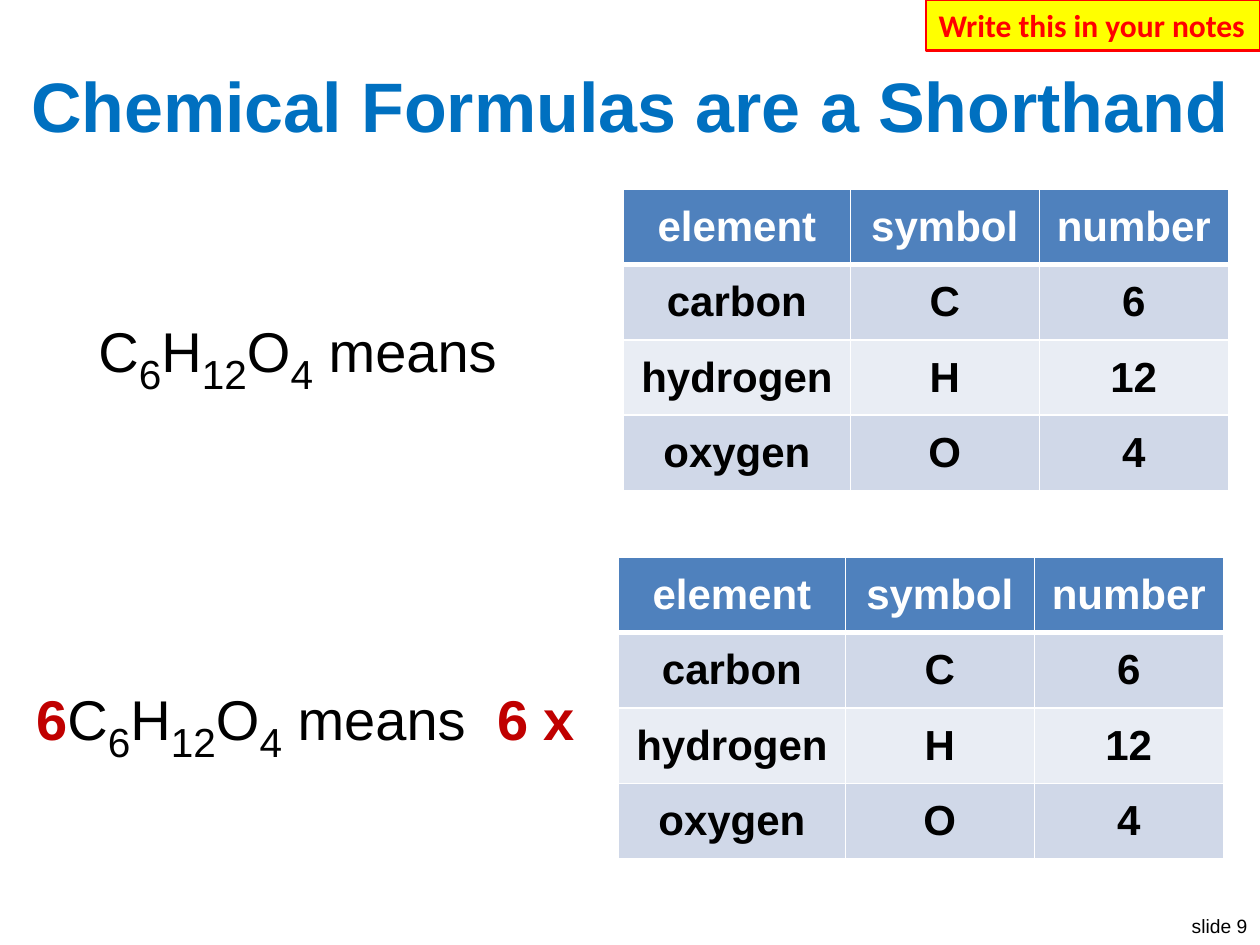
from dataclasses import dataclass
from itertools import groupby

from lxml import etree
from pptx import Presentation
from pptx.dml.color import RGBColor
from pptx.enum.shapes import MSO_SHAPE
from pptx.enum.text import MSO_ANCHOR, MSO_AUTO_SIZE, PP_ALIGN
from pptx.oxml.ns import qn
from pptx.util import Cm, Pt

RECT = MSO_SHAPE.RECTANGLE
TOP, MIDDLE = MSO_ANCHOR.TOP, MSO_ANCHOR.MIDDLE
LEFT, CENTER, RIGHT = PP_ALIGN.LEFT, PP_ALIGN.CENTER, PP_ALIGN.RIGHT
NO_FIT = MSO_AUTO_SIZE.NONE


@dataclass(frozen=True)
class Theme:
    font: str = "Arial"
    note_font: str = "Calibri"
    black: str = "000000"
    white: str = "FFFFFF"
    title: str = "0070C0"
    accent: str = "C00000"
    header: str = "4F81BD"
    bands: tuple = ("D0D8E8", "E9EDF4")
    note_fill: str = "FFFF00"
    note_ink: str = "FF0000"
    title_size: int = 40
    formula_size: int = 32
    subscript_size: int = 40
    table_size: int = 24
    note_size: int = 18
    footer_size: int = 11


THEME = Theme()
FORMULA = "C6H12O4"
ELEMENTS = [
    ("element", "symbol", "number"),
    ("carbon", "C", "6"),
    ("hydrogen", "H", "12"),
    ("oxygen", "O", "4"),
]
COLUMN_WIDTHS = (4.57, 3.81, 3.81)
ROW_HEIGHT = 1.52


def rgb(value):
    return RGBColor.from_string(value)


def set_attrs(target, values):
    for name, value in values.items():
        setattr(target, name, value)


def place(sp, left, top, width, height):
    set_attrs(sp, {"left": Cm(left), "top": Cm(top),
                   "width": Cm(width), "height": Cm(height)})


def add_run(p, text, size, color=THEME.black, bold=False, font=THEME.font):
    r = p.add_run()
    r.text = text
    set_attrs(r.font, {"name": font, "size": Pt(size), "bold": bold})
    r.font.color.rgb = rgb(color)
    return r


def set_frame(tf, align, wrap=True, anchor=TOP):
    set_attrs(tf, {"word_wrap": wrap, "auto_size": NO_FIT,
                   "vertical_anchor": anchor})
    p = tf.paragraphs[0]
    p.alignment = align
    return p


def add_title(s, text):
    sp = s.shapes.title
    place(sp, 0.25, 1.09, 24.89, 2.03)
    p = set_frame(sp.text_frame, CENTER, anchor=MIDDLE)
    add_run(p, text, THEME.title_size, THEME.title, True)


def write_formula(tf, ending, multiplier=""):
    p = set_frame(tf, LEFT)
    p.space_before = Pt(12)
    pPr = p._p.get_or_add_pPr()
    pPr.set("marL", "0")
    pPr.set("indent", "0")
    etree.SubElement(pPr, qn("a:buNone"))
    if multiplier:
        add_run(p, multiplier, THEME.formula_size, THEME.accent, True)
    for is_count, chars in groupby(FORMULA, str.isdigit):
        size = THEME.subscript_size if is_count else THEME.formula_size
        r = add_run(p, "".join(chars), size)
        if is_count:
            r._r.get_or_add_rPr().set("baseline", "-25000")
    add_run(p, ending, THEME.formula_size)
    if multiplier:
        add_run(p, multiplier + " x", THEME.formula_size, THEME.accent, True)


def add_border(cell, side, width):
    ln = etree.SubElement(cell._tc.get_or_add_tcPr(), qn("a:ln" + side),
                          w=str(Pt(width)))
    fill = etree.SubElement(ln, qn("a:solidFill"))
    etree.SubElement(fill, qn("a:srgbClr"), val=THEME.white)


def format_cell(cell, text, row):
    is_header = row == 0
    widths = {"L": 1, "R": 1, "T": 3 if row == 1 else 1,
              "B": 3 if is_header else 1}
    for side, width in widths.items():
        add_border(cell, side, width)
    cell.fill.solid()
    cell.fill.fore_color.rgb = rgb(
        THEME.header if is_header else THEME.bands[(row - 1) % 2])
    cell.vertical_anchor = MIDDLE
    p = cell.text_frame.paragraphs[0]
    p.alignment = CENTER
    add_run(p, text, THEME.table_size,
            THEME.white if is_header else THEME.black, True)


def add_element_table(s, left, top):
    table = s.shapes.add_table(
        len(ELEMENTS), len(COLUMN_WIDTHS), Cm(left), Cm(top),
        Cm(sum(COLUMN_WIDTHS)), Cm(ROW_HEIGHT * len(ELEMENTS))).table
    for column, width in zip(table.columns, COLUMN_WIDTHS):
        column.width = Cm(width)
    for i, values in enumerate(ELEMENTS):
        table.rows[i].height = Cm(ROW_HEIGHT)
        for j, text in enumerate(values):
            format_cell(table.cell(i, j), text, i)


def add_text_box(s, left, top, width, height):
    return s.shapes.add_textbox(
        Cm(left), Cm(top), Cm(width), Cm(height)).text_frame


def add_note_badge(s, text):
    sp = s.shapes.add_shape(RECT, Cm(18.67), Cm(0), Cm(6.73), Cm(1.02))
    sp.shadow.inherit = False
    sp.fill.solid()
    sp.fill.fore_color.rgb = rgb(THEME.note_fill)
    sp.line.color.rgb = rgb(THEME.note_ink)
    sp.line.width = Pt(1.5)
    p = set_frame(sp.text_frame, LEFT, wrap=False)
    add_run(p, text, THEME.note_size, THEME.note_ink, True, THEME.note_font)


def add_slide_label(s, text):
    tf = add_text_box(s, 23.5, 18.31, 1.9, 0.74)
    p = set_frame(tf, RIGHT, wrap=False)
    add_run(p, text, THEME.footer_size)


def main():
    prs = Presentation()
    set_attrs(prs, {"slide_width": Cm(25.4), "slide_height": Cm(19.05)})
    s = prs.slides.add_slide(prs.slide_layouts[1])
    add_slide_label(s, "slide 9")
    add_title(s, "Chemical Formulas are a Shorthand")
    body = s.placeholders[1]
    place(body, 1.73, 5.97, 9.7, 1.78)
    write_formula(body.text_frame, " means")
    add_element_table(s, 12.47, 11.23)
    write_formula(add_text_box(s, 0.48, 13.39, 12.22, 1.78), " means  ", "6")
    add_element_table(s, 12.57, 3.81)
    add_note_badge(s, "Write this in your notes")
    prs.save("out.pptx")


if __name__ == "__main__":
    main()
